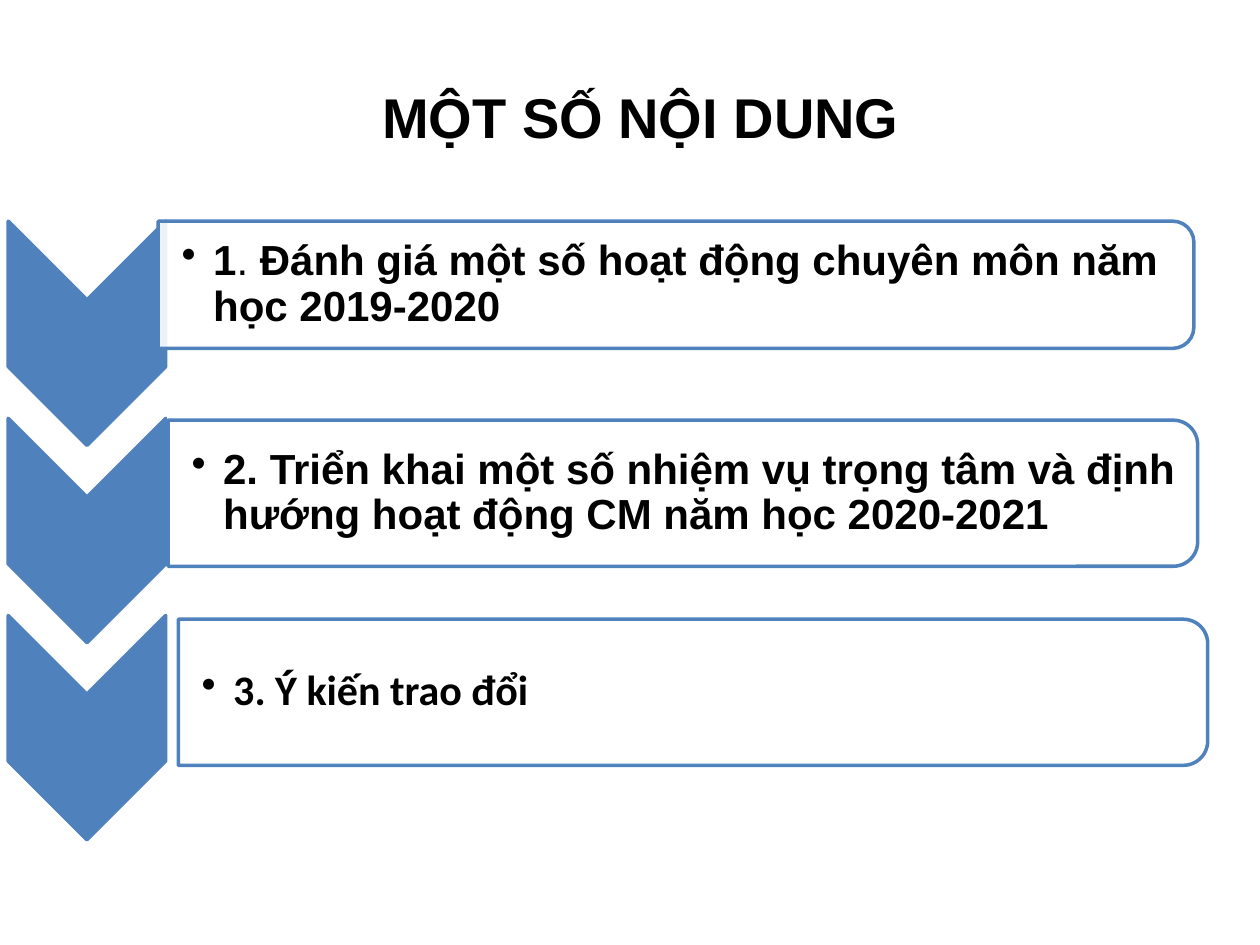
"""Builds a title slide with three chevron-marked content cards."""
from dataclasses import dataclass

from lxml import etree
from pptx import Presentation
from pptx.dml.color import RGBColor
from pptx.enum.shapes import MSO_SHAPE
from pptx.enum.text import MSO_ANCHOR, PP_ALIGN
from pptx.oxml.ns import qn
from pptx.util import Pt

CHEVRON = MSO_SHAPE.CHEVRON
CARD = MSO_SHAPE.ROUND_2_SAME_RECTANGLE
MIDDLE = MSO_ANCHOR.MIDDLE
CENTER = PP_ALIGN.CENTER
LEFT = PP_ALIGN.LEFT


@dataclass(frozen=True)
class Theme:
    accent: RGBColor = RGBColor(0x4F, 0x81, 0xBD)
    surface: RGBColor = RGBColor(0xFF, 0xFF, 0xFF)
    text: RGBColor = RGBColor(0, 0, 0)
    heading_font: str = "Arial"
    title_size: int = 32
    body_size: int = 24
    line_width: int = 2
    card_opacity: int = 90


THEME = Theme()
TITLE = "MỘT SỐ NỘI DUNG"
ITEMS = [
    ([("1", True), (". ", False),
      ("Đánh giá một số hoạt động chuyên môn năm học 2019-2020", True)],
     "Arial", 591.84, 72.72),
    ([("2. Triển khai một số nhiệm vụ trọng tâm và định hướng "
       "hoạt động CM năm học 2020-2021", True)],
     "Arial", 588.24, 83.52),
    ([("3. Ý kiến trao đổi", True)], "Calibri", 588.24, 83.52),
]
CHEVRON_LEFT, CHEVRON_TOP, CHEVRON_PITCH = -14.4, 145.44, 112.68
CHEVRON_LENGTH, CHEVRON_BREADTH = 128.16, 90
CARD_LEFT, CARD_TOP = 90.36, 126.36
CARD_STEP, CARD_PITCH = 5.76, 113.76
CARD_PADDING = 3.75


def add_turned_shape(slide, preset, left, top, width, height, fill):
    shape = slide.shapes.add_shape(preset, Pt(left), Pt(top), Pt(width), Pt(height))
    shape.rotation = 90
    shape.shadow.inherit = False
    shape.fill.solid()
    shape.fill.fore_color.rgb = fill
    shape.line.color.rgb = THEME.accent
    shape.line.width = Pt(THEME.line_width)
    return shape


def add_card(slide, left, top, width, height):
    turned_left = left + (width - height) / 2
    turned_top = top + (height - width) / 2
    card = add_turned_shape(slide, CARD, turned_left, turned_top,
                            height, width, THEME.surface)
    color = card.fill._xPr.find(qn("a:solidFill"))[0]
    etree.SubElement(color, qn("a:alpha"), val=str(THEME.card_opacity * 1000))


def add_text(slide, left, top, width, height, parts, font, size, alignment):
    box = slide.shapes.add_textbox(Pt(left), Pt(top), Pt(width), Pt(height))
    frame = box.text_frame
    frame.word_wrap = True
    frame.vertical_anchor = MIDDLE
    paragraph = frame.paragraphs[0]
    paragraph.alignment = alignment
    for text, bold in parts:
        run = paragraph.add_run()
        run.text = text
        run.font.name = font
        run.font.size = Pt(size)
        run.font.bold = bold
        run.font.color.rgb = THEME.text
    return frame


def add_bullet_text(slide, left, top, width, height, parts, font):
    frame = add_text(slide, left, top, width, height, parts, font,
                     THEME.body_size, LEFT)
    frame.margin_left = Pt(13.44)
    frame.margin_top = frame.margin_right = frame.margin_bottom = Pt(1.2)
    paragraph = frame.paragraphs[0]
    paragraph.level = 1
    paragraph.line_spacing = 0.9
    properties = paragraph._p.get_or_add_pPr()
    properties.set("marL", str(Pt(18)))
    properties.set("indent", str(Pt(-18)))
    etree.SubElement(properties, qn("a:buChar"), char="•")


def add_item(slide, index, parts, font, width, height):
    add_turned_shape(slide, CHEVRON, CHEVRON_LEFT,
                     CHEVRON_TOP + index * CHEVRON_PITCH,
                     CHEVRON_LENGTH, CHEVRON_BREADTH, THEME.accent)
    left = CARD_LEFT + index * CARD_STEP
    top = CARD_TOP + index * CARD_PITCH
    add_card(slide, left, top, width, height)
    add_bullet_text(slide, left, top + CARD_PADDING, width - CARD_PADDING,
                    height - 2 * CARD_PADDING, parts, font)


def main():
    presentation = Presentation()
    presentation.slide_width, presentation.slide_height = Pt(720), Pt(540)
    slide = presentation.slides.add_slide(presentation.slide_layouts[6])
    add_text(slide, 18, 21.6, 696.24, 90, [(TITLE, True)],
             THEME.heading_font, THEME.title_size, CENTER)
    for index, item in enumerate(ITEMS):
        add_item(slide, index, *item)
    presentation.save("out.pptx")


if __name__ == "__main__":
    main()
